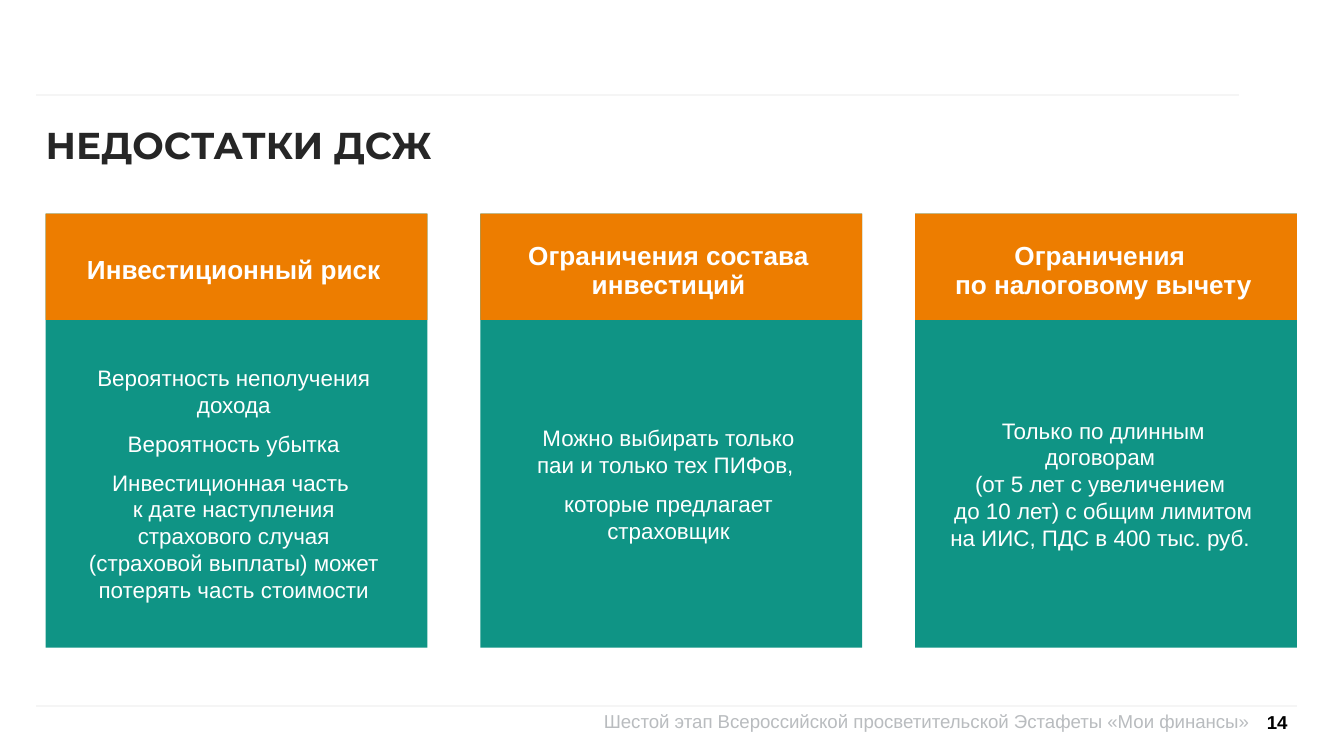
from collections import namedtuple
from dataclasses import dataclass
from lxml import etree
from pptx import Presentation
from pptx.dml.color import RGBColor
from pptx.enum.shapes import MSO_CONNECTOR, MSO_SHAPE
from pptx.enum.text import MSO_ANCHOR, MSO_AUTO_SIZE, PP_ALIGN
from pptx.oxml.ns import qn
from pptx.util import Inches, Pt

RECT, LINE = MSO_SHAPE.RECTANGLE, MSO_CONNECTOR.STRAIGHT
TOP, MID = MSO_ANCHOR.TOP, MSO_ANCHOR.MIDDLE
LEFT, MIDDLE, RIGHT = PP_ALIGN.LEFT, PP_ALIGN.CENTER, PP_ALIGN.RIGHT
FIXED = MSO_AUTO_SIZE.NONE

Box = namedtuple("Box", "x y w h")
Style = namedtuple("Style", "font size color bold align anchor lead")
Card = namedtuple("Card", "head body head_w body_w body_h")


@dataclass(frozen=True)
class Theme:
    """Colours and text styles of the slide."""
    teal: str = "0F9485"
    orange: str = "ED7D00"
    rule: str = "F5F5F5"
    gap: float = 6.3
    title: Style = Style("Montserrat", 20, "262626", True, LEFT, TOP, 0.9)
    head: Style = Style("Arial", 14, "FFFFFF", True, MIDDLE, MID, 0.9)
    body: Style = Style("Arial", 12, "FFFFFF", False, MIDDLE, MID, 1.0)
    foot: Style = Style("Arial", 10, "B9BCBF", False, RIGHT, TOP, 1.0)
    page: Style = Style("Arial", 10, "000000", True, RIGHT, MID, 1.0)


THEME = Theme()
CARDS = (
    Card("Инвестиционный риск",
         ("Вероятность неполучения дохода", "Вероятность убытка",
          "Инвестиционная часть \nк дате наступления страхового случая "
          "(страховой выплаты) может потерять часть стоимости"),
         2.53, 2.24, 1.78),
    Card("Ограничения состава инвестиций",
         ("Можно выбирать только паи и только тех ПИФов, ",
          "которые предлагает страховщик"),
         2.26, 2.16, 0.89),
    Card("Ограничения \nпо налоговому вычету",
         ("Только по длинным договорам \n(от 5 лет с увеличением \n"
          "до 10 лет) с общим лимитом на ИИС, ПДС в 400 тыс. руб. ",),
         2.48, 2.33, 1.01),
)


def place(box):
    """Turn a box in inches into slide units."""
    return [Inches(v) for v in box]


def write(frame, paras, style, pad=0):
    """Fill a text frame with paragraphs in one style."""
    frame.auto_size, frame.word_wrap = FIXED, True
    frame.vertical_anchor = style.anchor
    frame.margin_left = frame.margin_right = Inches(pad)
    frame.margin_top = frame.margin_bottom = Inches(pad)
    for i, text in enumerate(paras):
        para = frame.add_paragraph() if i else frame.paragraphs[0]
        para.alignment, para.line_spacing = style.align, style.lead
        para.space_before = Pt(THEME.gap if i else 0)
        for j, part in enumerate(text.split("\n")):
            if j:
                para.add_line_break()
            run = para.add_run()
            run.text = part
            font = run.font
            font.name, font.size, font.bold = style.font, Pt(style.size), style.bold
            font.color.rgb = RGBColor.from_string(style.color)


def label(slide, box, paras, style, pad=0):
    """Add a text box and return its frame."""
    frame = slide.shapes.add_textbox(*place(box)).text_frame
    write(frame, paras, style, pad)
    return frame


def panel(slide, box, color):
    """Add a plain filled rectangle."""
    shape = slide.shapes.add_shape(RECT, *place(box))
    shape.shadow.inherit = False
    shape.fill.solid()
    shape.fill.fore_color.rgb = RGBColor.from_string(color)
    shape.line.fill.background()


def rule(slide, x, y, w):
    """Add a thin level line."""
    line = slide.shapes.add_connector(LINE, *place((x, y, x + w, y)))
    line.line.color.rgb = RGBColor.from_string(THEME.rule)
    line.line.width = Pt(1)
    etree.SubElement(line._element.spPr, qn("a:effectLst"))


def header(slide, box):
    """Place the top rule and the title."""
    rule(slide, box.x, box.y, box.w)
    title = slide.shapes.title
    spot = Box(box.x + 0.07, box.y + 0.24, 6.92, 0.33)
    title.left, title.top, title.width, title.height = place(spot)
    write(title.text_frame, ["НЕДОСТАТКИ ДСЖ"], THEME.title)


def card(slide, box, data):
    """Place one card: a heading band over a body."""
    band = Box(box.x, box.y, box.w, 0.79)
    mid = box.x + box.w / 2 - 0.02
    core = box.y + (band.h + box.h) / 2
    panel(slide, box, THEME.teal)
    panel(slide, band, THEME.orange)
    label(slide, Box(mid - data.head_w / 2, box.y + 0.15, data.head_w, 0.56),
          [data.head], THEME.head)
    label(slide, Box(mid - data.body_w / 2, core - data.body_h / 2,
                     data.body_w, data.body_h), data.body, THEME.body)


def cards(slide, box):
    """Spread the cards evenly over the box."""
    wide = 2.84
    step = (box.w - wide) / (len(CARDS) - 1)
    for i, data in enumerate(CARDS):
        card(slide, Box(box.x + i * step, box.y, wide, box.h), data)


def footer(slide, box):
    """Place the bottom rule, the footer text and the page number."""
    end = box.x + box.w
    rule(slide, box.x, box.y, box.w)
    label(slide, Box(end - 6.07, box.y + 0.03, 5.71, 0.35),
          ["Шестой этап Всероссийской просветительской Эстафеты «Мои финансы»"],
          THEME.foot)
    page = label(slide, Box(end - 0.2, box.y - 0.02, 0.19, 0.28),
                 ["14"], THEME.page, 0.06)
    page.word_wrap = False


def main():
    """Build and save the slide."""
    deck = Presentation()
    deck.slide_width = Inches(10)
    deck.slide_height = deck.slide_width * 9 // 16
    slide = deck.slides.add_slide(deck.slide_layouts[5])
    header(slide, Box(0.27, 0.71, 8.95, 0.57))
    cards(slide, Box(0.34, 1.59, 9.31, 3.23))
    footer(slide, Box(0.27, 5.25, 9.38, 0.38))
    deck.save("out.pptx")


if __name__ == "__main__":
    main()
